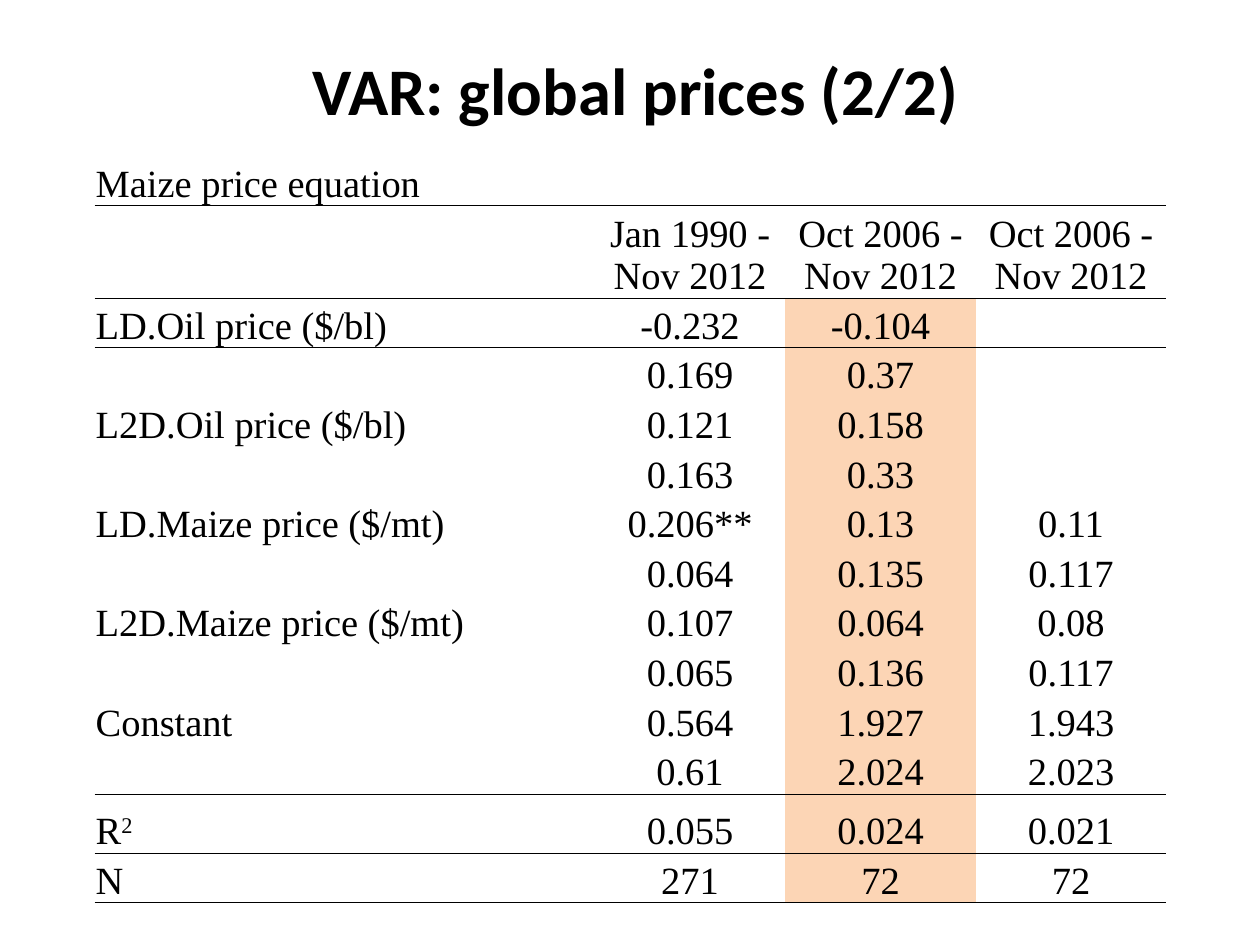
from dataclasses import dataclass

import pptx
import pptx.dml.color
import pptx.enum.text
import pptx.oxml
import pptx.oxml.ns
import pptx.slide
import pptx.table
import pptx.text.text
import pptx.util
from pptx.util import Cm, Pt

BLACK = "000000"
HIGHLIGHT = "FCD5B5"
HIGHLIGHT_COLUMN = 2
FIRST_RESULT_ROW = 2
NO_STYLE = "{2D5ABB26-0587-4C30-8999-92F81FD0307C}"
COLUMN_WIDTHS = (10.08, 3.84, 3.84, 3.84)
LINE_HEIGHT = 1.0

TITLE_FONT = {"name": "Calibri", "size": Pt(38), "bold": True}
TABLE_FONT = {"name": "Times New Roman", "size": Pt(22), "bold": False}
CELL_FORMAT = {
    "margin_left": Cm(0.02),
    "margin_right": Cm(0.02),
    "margin_top": Cm(0.02),
    "margin_bottom": Cm(0),
    "vertical_anchor": pptx.enum.text.MSO_ANCHOR.BOTTOM,
}


@dataclass
class TableRow:
    label: str
    values: tuple[str, ...] = ("", "", "")
    height: float = LINE_HEIGHT
    ruled_below: bool = False
    superscript: str = ""


ROWS = [
    TableRow("Maize price equation", ruled_below=True),
    TableRow("", ("Jan 1990 - Nov 2012", "Oct 2006 - Nov 2012", "Oct 2006 - Nov 2012"),
             height=1.86, ruled_below=True),
    TableRow("LD.Oil price ($/bl)", ("-0.232", "-0.104", "")),
    TableRow("", ("0.169", "0.37", "")),
    TableRow("L2D.Oil price ($/bl)", ("0.121", "0.158", "")),
    TableRow("", ("0.163", "0.33", "")),
    TableRow("LD.Maize price ($/mt)", ("0.206**", "0.13", "0.11")),
    TableRow("", ("0.064", "0.135", "0.117")),
    TableRow("L2D.Maize price ($/mt)", ("0.107", "0.064", "0.08")),
    TableRow("", ("0.065", "0.136", "0.117")),
    TableRow("Constant", ("0.564", "1.927", "1.943")),
    TableRow("", ("0.61", "2.024", "2.023"), ruled_below=True),
    TableRow("R", ("0.055", "0.024", "0.021"), height=1.19, superscript="2"),
    TableRow("N", ("271", "72", "72"), ruled_below=True),
]


def color(value: str) -> pptx.dml.color.RGBColor:
    return pptx.dml.color.RGBColor.from_string(value)


def set_attributes(target: object, values: dict) -> None:
    for name, value in values.items():
        setattr(target, name, value)


def add_run(paragraph: pptx.text.text._Paragraph, text: str, font: dict,
            superscript: bool = False) -> None:
    run = paragraph.add_run()
    run.text = text
    set_attributes(run.font, font)
    run.font.color.rgb = color(BLACK)
    if superscript:
        run.font._element.set("baseline", "30000")


def add_rule(cell: pptx.table._Cell, side: str) -> None:
    """Draw a thin line on side "T" (top) or "B" (bottom)."""
    namespace = pptx.oxml.ns.nsdecls("a")
    line = pptx.oxml.parse_xml(
        f'<a:ln{side} {namespace} w="{Pt(0.5)}"><a:solidFill>'
        f'<a:srgbClr val="{BLACK}"/></a:solidFill></a:ln{side}>')
    cell._tc.get_or_add_tcPr().append(line)


def fill_cell(cell: pptx.table._Cell, text: str, superscript: str,
              centered: bool, highlighted: bool) -> None:
    set_attributes(cell, CELL_FORMAT)
    if highlighted:
        cell.fill.solid()
        cell.fill.fore_color.rgb = color(HIGHLIGHT)
    else:
        cell.fill.background()
    paragraph = cell.text_frame.paragraphs[0]
    if centered:
        paragraph.alignment = pptx.enum.text.PP_ALIGN.CENTER
    if text:
        add_run(paragraph, text, TABLE_FONT)
    if superscript:
        add_run(paragraph, superscript, TABLE_FONT, superscript=True)


def add_title(slide: pptx.slide.Slide, text: str) -> None:
    title = slide.shapes.title
    set_attributes(title, {"left": Cm(1.7), "top": Cm(0.43),
                           "width": Cm(22.23), "height": Cm(2.74)})
    title.text_frame.vertical_anchor = pptx.enum.text.MSO_ANCHOR.MIDDLE
    paragraph = title.text_frame.paragraphs[0]
    paragraph.alignment = pptx.enum.text.PP_ALIGN.CENTER
    add_run(paragraph, text, TITLE_FONT)


def add_price_table(slide: pptx.slide.Slide, rows: list[TableRow]) -> None:
    table = slide.shapes.add_table(
        len(rows), len(COLUMN_WIDTHS), Cm(1.91), Cm(3.15),
        Cm(sum(COLUMN_WIDTHS)), Cm(sum(row.height for row in rows))).table
    set_attributes(table, {"first_row": False, "horz_banding": False})
    table._tbl.tblPr.find(pptx.oxml.ns.qn("a:tableStyleId")).text = NO_STYLE
    for column, width in zip(table.columns, COLUMN_WIDTHS):
        column.width = Cm(width)
    for row_index, row in enumerate(rows):
        table.rows[row_index].height = Cm(row.height)
        for column_index, text in enumerate((row.label, *row.values)):
            cell = table.cell(row_index, column_index)
            if row_index and rows[row_index - 1].ruled_below:
                add_rule(cell, "T")
            if row.ruled_below:
                add_rule(cell, "B")
            is_label = column_index == 0
            fill_cell(cell, text, row.superscript if is_label else "", not is_label,
                      column_index == HIGHLIGHT_COLUMN and row_index >= FIRST_RESULT_ROW)
    table.cell(0, 0).merge(table.cell(0, len(COLUMN_WIDTHS) - 1))


def main() -> None:
    presentation = pptx.Presentation()
    set_attributes(presentation, {"slide_width": Cm(25.4), "slide_height": Cm(19.05)})
    slide = presentation.slides.add_slide(presentation.slide_layouts[5])
    add_title(slide, "VAR: global prices (2/2)")
    add_price_table(slide, ROWS)
    presentation.save("out.pptx")


if __name__ == "__main__":
    main()
